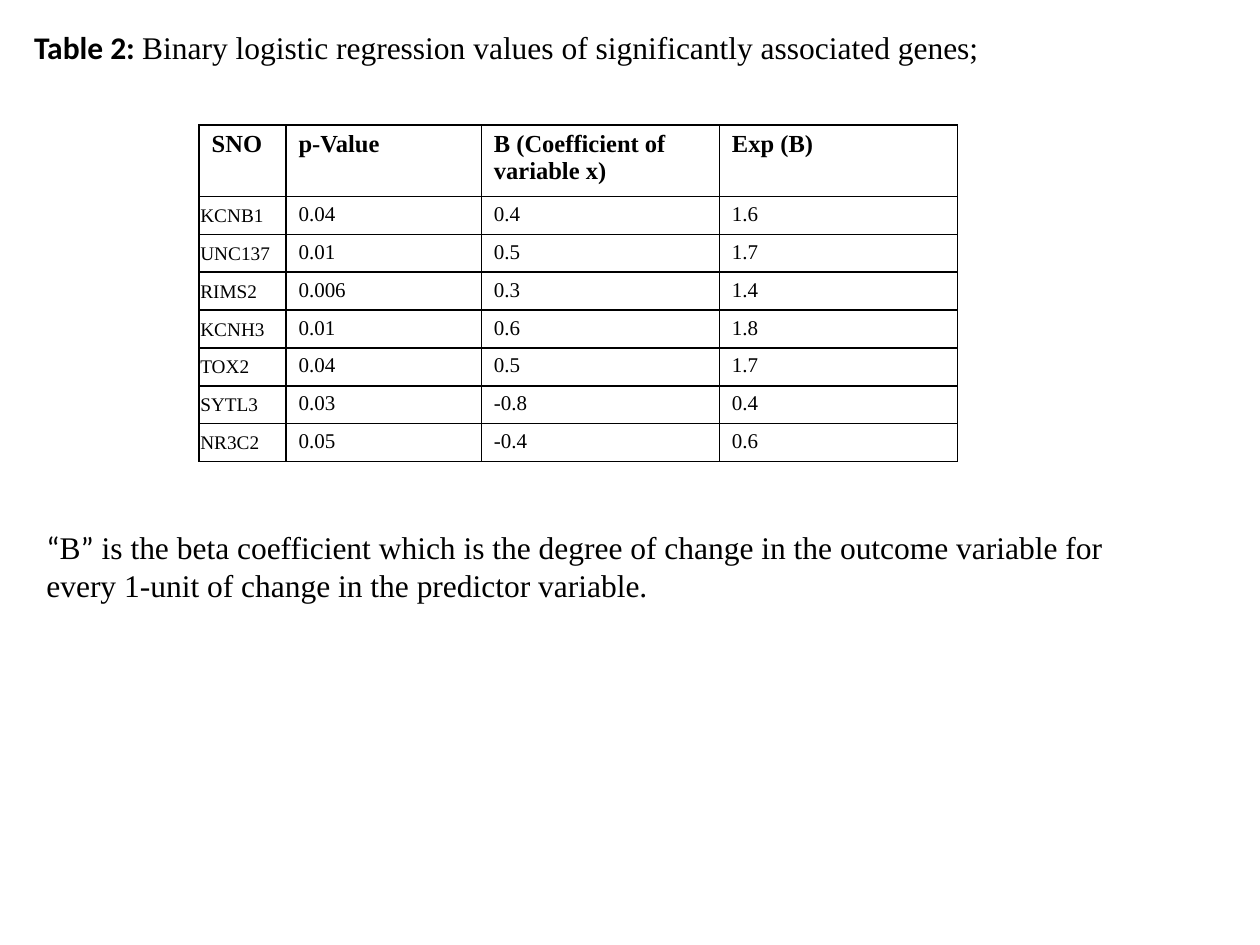
from lxml import etree
from pptx import Presentation
from pptx.dml.color import RGBColor
from pptx.enum.text import MSO_ANCHOR, MSO_AUTO_SIZE, PP_ALIGN
from pptx.oxml.ns import qn
from pptx.util import Inches, Pt

COLORS = {"ink": "000000"}
SERIF, SANS = "Times New Roman", "Calibri"


def format_run(run, size, font_name, bold=False):
    run.font.size = Pt(size)
    run.font.name = font_name
    run.font.bold = bold
    run.font.color.rgb = RGBColor.from_string(COLORS["ink"])


def add_borders(cell):
    properties = cell._tc.get_or_add_tcPr()
    for position, side in enumerate(("lnL", "lnR", "lnT", "lnB")):
        line = etree.Element(qn(f"a:{side}"), w=str(Pt(1)))
        fill = etree.SubElement(line, qn("a:solidFill"))
        etree.SubElement(fill, qn("a:srgbClr"), val=COLORS["ink"])
        properties.insert(position, line)


presentation = Presentation()
presentation.slide_width = Inches(10)
presentation.slide_height = Inches(7.5)
slide = presentation.slides.add_slide(presentation.slide_layouts[5])

# Table caption as the slide title
title = slide.shapes.title
title.left, title.top = Inches(0.17), Inches(0.17)
title.width, title.height = Inches(7.84), Inches(0.4)
title_frame = title.text_frame
title_frame.word_wrap = False
title_frame.auto_size = MSO_AUTO_SIZE.SHAPE_TO_FIT_TEXT
title_frame.vertical_anchor = MSO_ANCHOR.TOP
paragraph = title_frame.paragraphs[0]
paragraph.alignment = PP_ALIGN.LEFT
for text, font_name, bold in (
    ("Table 2: ", SANS, True),
    ("Binary logistic regression values of significantly associated genes;", SERIF, False),
):
    run = paragraph.add_run()
    run.text = text
    format_run(run, 18, font_name, bold)

# Regression table
rows = [
    ("SNO", "p-Value", "B (Coefficient of variable x)", "Exp (B)"),
    ("KCNB1", "0.04", "0.4", "1.6"),
    ("UNC137", "0.01", "0.5", "1.7"),
    ("RIMS2", "0.006", "0.3", "1.4"),
    ("KCNH3", "0.01", "0.6", "1.8"),
    ("TOX2", "0.04", "0.5", "1.7"),
    ("SYTL3", "0.03", "-0.8", "0.4"),
    ("NR3C2", "0.05", "-0.4", "0.6"),
]
column_widths = (0.69, 1.55, 1.89, 1.89)
table = slide.shapes.add_table(
    len(rows), len(column_widths), Inches(1.58), Inches(0.99), Inches(6.02), Inches(2.67)
).table
table.horz_banding = False
for column, width in zip(table.columns, column_widths):
    column.width = Inches(width)

for row_index, values in enumerate(rows):
    is_header = row_index == 0
    table.rows[row_index].height = Inches(0.57 if is_header else 0.3)
    for column_index, value in enumerate(values):
        cell = table.cell(row_index, column_index)
        cell.fill.background()
        add_borders(cell)
        is_gene = column_index == 0 and not is_header
        if is_gene:
            cell.vertical_anchor = MSO_ANCHOR.MIDDLE
            cell.margin_left = cell.margin_right = cell.margin_top = Inches(0.01)
            cell.margin_bottom = 0
        cell.text_frame.text = value
        size = 14 if is_header else 11 if is_gene else 12
        format_run(cell.text_frame.paragraphs[0].runs[0], size, SERIF, is_header)

# Explanation of the coefficient
note = slide.shapes.add_textbox(Inches(0.27), Inches(4.14), Inches(8.67), Inches(0.71))
note.text_frame.word_wrap = True
note.text_frame.auto_size = MSO_AUTO_SIZE.SHAPE_TO_FIT_TEXT
for text, font_name in (
    ("“", SANS),
    ("B", SERIF),
    ("”", SANS),
    (" is the beta coefficient which is the degree of change in the outcome variable "
     "for every 1-unit of change in the predictor variable.", SERIF),
):
    run = note.text_frame.paragraphs[0].add_run()
    run.text = text
    format_run(run, 18, font_name)

presentation.save("out.pptx")
